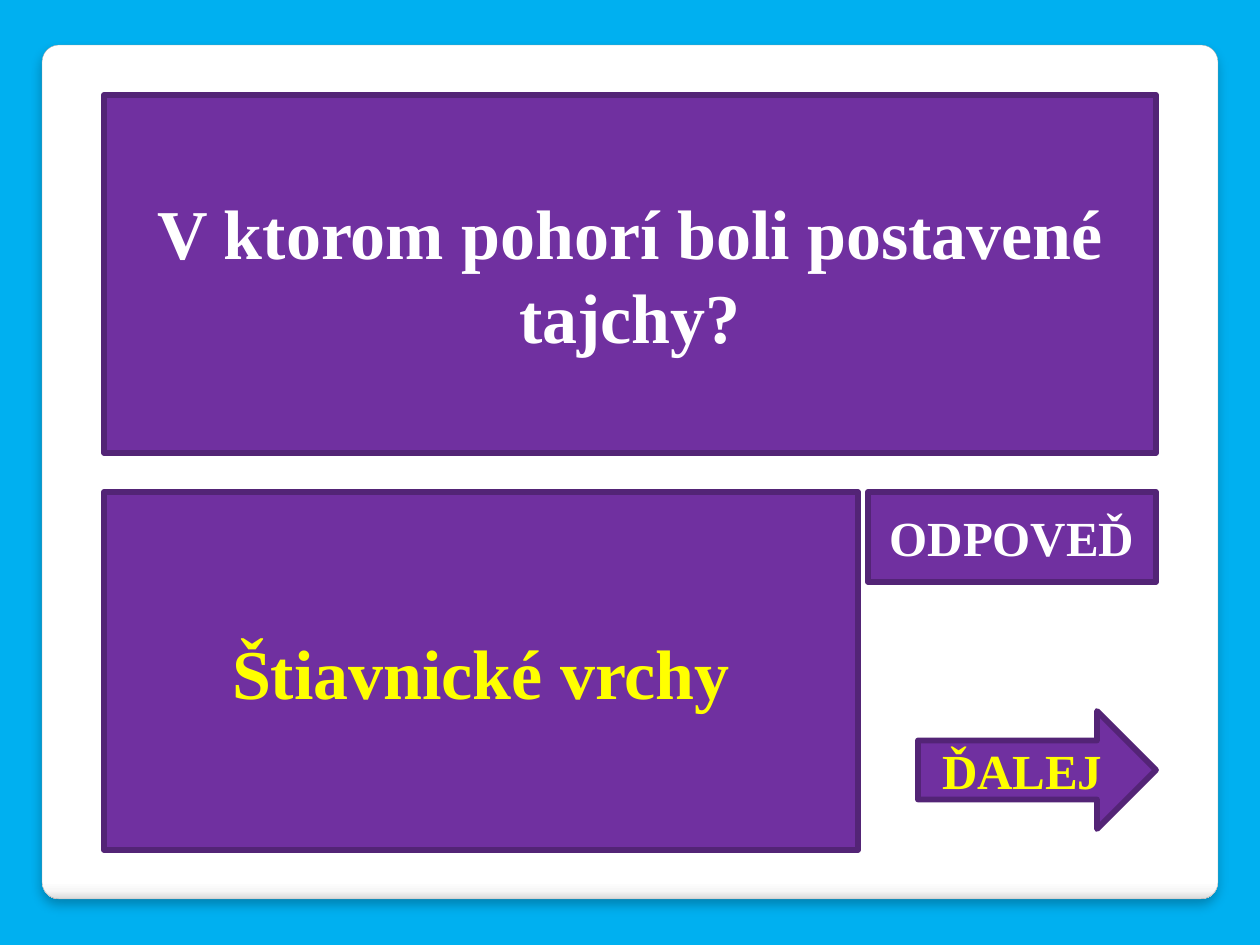
from pptx import Presentation
from pptx.dml.color import RGBColor
from pptx.enum.shapes import MSO_SHAPE
from pptx.enum.text import MSO_ANCHOR, MSO_AUTO_SIZE, PP_ALIGN
from pptx.oxml import parse_xml
from pptx.oxml.ns import nsdecls
from pptx.util import Emu, Pt

PX = 914400 / 126
WHITE, YELLOW = "FFFFFF", "FFFF00"
PANEL_STOPS = [(0, "FFFFFF"), (98, "FFFFFF"), (99, "F7F7F7"), (100, "DADADA")]


def px(n):
    return Emu(round(n * PX))


def rgb(color):
    return RGBColor.from_string(color)


class QuizSlide:
    font = "Times New Roman"
    fill = "7030A0"
    edge = "532476"
    edge_width = 3.35

    def __init__(self, prs, background):
        self.s = prs.slides.add_slide(prs.slide_layouts[5])
        bg = self.s.background.fill
        bg.solid()
        bg.fore_color.rgb = rgb(background)

    def panel(self, x, y, w, h):
        """Add the rounded white card behind everything else."""
        sp = self.s.shapes.add_shape(MSO_SHAPE.ROUNDED_RECTANGLE, px(x), px(y), px(w), px(h))
        sp.adjustments[0] = 0.02
        sp.line.color.rgb = rgb("A4A4A4")
        sp.line.width = Pt(0.16)
        stops = "".join(
            f'<a:gs pos="{pos * 1000}"><a:srgbClr val="{color}"/></a:gs>'
            for pos, color in PANEL_STOPS
        )
        gradient = parse_xml(
            f'<a:gradFill {nsdecls("a")}><a:gsLst>{stops}</a:gsLst>'
            '<a:lin ang="5400000" scaled="0"/></a:gradFill>'
        )
        shadow = parse_xml(
            f'<a:effectLst {nsdecls("a")}><a:outerShdw blurRad="{Pt(6)}" dist="{Pt(4)}" '
            'dir="5400000" algn="t" rotWithShape="0"><a:srgbClr val="000000">'
            '<a:alpha val="25000"/></a:srgbClr></a:outerShdw></a:effectLst>'
        )
        sp.line._get_or_add_ln().addprevious(gradient)
        sp.line._get_or_add_ln().addnext(shadow)
        self.s.shapes.title._element.addprevious(sp._element)

    def question(self, text, x, y, w, h):
        sp = self.s.shapes.title
        sp.left, sp.top, sp.width, sp.height = px(x), px(y), px(w), px(h)
        self.style(sp, text, 40, WHITE)

    def box(self, text, x, y, w, h, size, color, kind=MSO_SHAPE.RECTANGLE):
        sp = self.s.shapes.add_shape(kind, px(x), px(y), px(w), px(h))
        sp.shadow.inherit = False
        self.style(sp, text, size, color)

    def style(self, sp, text, size, color):
        """Give a shape the purple look and its centred bold text."""
        sp.fill.solid()
        sp.fill.fore_color.rgb = rgb(self.fill)
        sp.line.color.rgb = rgb(self.edge)
        sp.line.width = Pt(self.edge_width)
        tf = sp.text_frame
        tf.text = text
        tf.word_wrap = True
        tf.auto_size = MSO_AUTO_SIZE.NONE
        tf.vertical_anchor = MSO_ANCHOR.MIDDLE
        p = tf.paragraphs[0]
        p.alignment = PP_ALIGN.CENTER
        p.font.name = self.font
        p.font.size = Pt(size)
        p.font.bold = True
        p.font.color.rgb = rgb(color)


def main():
    prs = Presentation()
    prs.slide_width, prs.slide_height = px(1260), px(945)

    left, right = 104, 1156
    top, answer_top, height = 95, 492, 358
    button_w, arrow_w = 288, 238

    quiz = QuizSlide(prs, "00B0F0")
    quiz.panel(42, 45, 1176, 854)
    quiz.question("V ktorom pohorí boli postavené tajchy?", left, top, right - left, height)
    quiz.box("Štiavnické vrchy", left, answer_top, 754, height, 40, YELLOW)
    quiz.box("ODPOVEĎ", right - button_w, answer_top, button_w, 90, 28, WHITE)
    quiz.box("ĎALEJ", right - arrow_w, 711, arrow_w, 118, 28, YELLOW, MSO_SHAPE.RIGHT_ARROW)

    prs.save("out.pptx")


if __name__ == "__main__":
    main()
